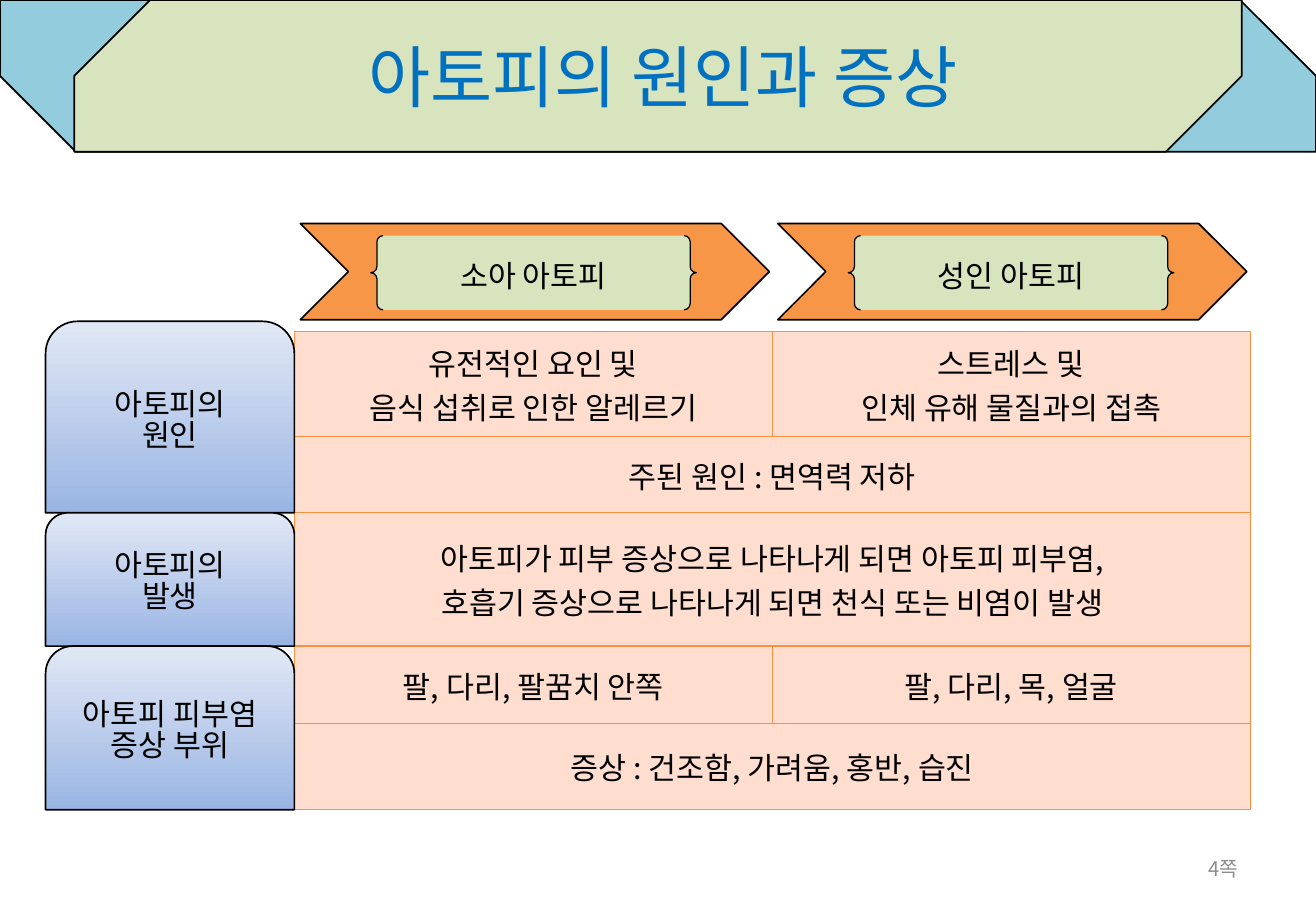
from lxml import etree
from pptx import Presentation
from pptx.dml.color import RGBColor
from pptx.enum.shapes import MSO_SHAPE as SHAPE
from pptx.enum.text import MSO_ANCHOR as ANCHOR, PP_ALIGN as ALIGN
from pptx.oxml import parse_xml
from pptx.oxml.ns import nsdecls, qn
from pptx.util import Pt

FONT = "Noto Sans CJK KR"
BLACK = RGBColor(0, 0, 0)
GRAY = RGBColor(0x8C, 0x8C, 0x8C)
TITLE_BLUE = RGBColor(0x00, 0x70, 0xC0)
BANNER_BLUE = RGBColor(0x93, 0xCD, 0xDD)
GREEN = RGBColor(0xD7, 0xE4, 0xBD)
ORANGE = RGBColor(0xF7, 0x96, 0x46)
BORDER = RGBColor(0xF6, 0x92, 0x40)
CELL_PINK = RGBColor(0xFF, 0xDD, 0xCF)
LABEL_DARK = RGBColor(0x9A, 0xB5, 0xE4)
LABEL_LIGHT = RGBColor(0xE1, 0xE8, 0xF5)

SLIDE_WIDTH, SLIDE_HEIGHT = 780, 540
ROW_HEIGHTS = [62.5, 45, 79, 46, 51]
CELL_TEXTS = [
    ["유전적인 요인 및\n음식 섭취로 인한 알레르기", "스트레스 및\n인체 유해 물질과의 접촉"],
    ["주된 원인 : 면역력 저하"],
    ["아토피가 피부 증상으로 나타나게 되면 아토피 피부염,\n"
     "호흡기 증상으로 나타나게 되면 천식 또는 비염이 발생"],
    ["팔, 다리, 팔꿈치 안쪽", "팔, 다리, 목, 얼굴"],
    ["증상 : 건조함, 가려움, 홍반, 습진"],
]
LABELS = [("아토피의\n원인", 113.5), ("아토피의\n발생", 79), ("아토피 피부염\n증상 부위", 97)]


def write_text(frame, text, size=18, color=BLACK, align=ALIGN.CENTER, spacing=1.0):
    frame.word_wrap = True
    frame.vertical_anchor = ANCHOR.MIDDLE
    for index, line in enumerate(text.split("\n")):
        paragraph = frame.paragraphs[0] if index == 0 else frame.add_paragraph()
        paragraph.alignment = align
        paragraph.line_spacing = spacing
        run = paragraph.add_run()
        run.text = line
        run.font.size = Pt(size)
        run.font.color.rgb = color
        run.font.name = FONT
        east_asian = etree.SubElement(run.font._element, qn("a:ea"))
        east_asian.set("typeface", FONT)


def add_box(slide, kind, box, fill=None, line_width=1):
    shape = slide.shapes.add_shape(kind, *map(Pt, box))
    shape.shadow.inherit = False
    shape.line.color.rgb = BLACK
    shape.line.width = Pt(line_width)
    if fill is not None:
        shape.fill.solid()
        shape.fill.fore_color.rgb = fill
    return shape


def add_banner(slide, box):
    left, top, width, height = box
    margin = 44
    # Ribbon behind, with cut corners at top right and bottom left
    ribbon = add_box(slide, SHAPE.SNIP_2_DIAG_RECTANGLE, box, BANNER_BLUE)
    ribbon.adjustments[0], ribbon.adjustments[1] = 0, 0.5
    # Panel in front, cut at the opposite corners
    panel = add_box(slide, SHAPE.SNIP_2_DIAG_RECTANGLE,
                    (left + margin, top, width - 2 * margin, height), GREEN)
    panel.adjustments[0], panel.adjustments[1] = 0.5, 0
    # Title above the panel
    title = slide.shapes.title
    title.left, title.top = Pt(left + 42), Pt(top)
    title.width, title.height = Pt(width - 78), Pt(height)
    write_text(title.text_frame, "아토피의 원인과 증상", size=40, color=TITLE_BLUE)
    slide.shapes._spTree.append(title._element)


def add_column_header(slide, box, text):
    left, top, width, height = box
    add_box(slide, SHAPE.CHEVRON, box, ORANGE)
    brace = add_box(slide, SHAPE.DOUBLE_BRACE,
                    (left + 41.75, top + 7.2, 193, 44), GREEN, line_width=0.75)
    write_text(brace.text_frame, text)


def format_cell(cell):
    properties = cell._tc.get_or_add_tcPr()
    for side in ("lnL", "lnR", "lnT", "lnB"):
        properties.append(parse_xml(
            f'<a:{side} {nsdecls("a")} w="{Pt(0.75)}"><a:solidFill>'
            f'<a:srgbClr val="{BORDER}"/></a:solidFill></a:{side}>'))
    cell.fill.solid()
    cell.fill.fore_color.rgb = CELL_PINK
    cell.vertical_anchor = ANCHOR.MIDDLE


def add_cause_table(slide, box):
    frame = slide.shapes.add_table(len(CELL_TEXTS), 2, *map(Pt, box))
    table = frame.table
    table.first_row = table.horz_banding = False
    for column in table.columns:
        column.width = Pt(box[2] / 2)
    for row, height, texts in zip(table.rows, ROW_HEIGHTS, CELL_TEXTS):
        row.height = Pt(height)
        for cell in row.cells:
            format_cell(cell)
        if len(texts) == 1:
            row.cells[0].merge(row.cells[1])
        for cell, text in zip(row.cells, texts):
            write_text(cell.text_frame, text)


def add_row_labels(slide, left, top, width):
    for text, height in LABELS:
        label = add_box(slide, SHAPE.ROUND_2_SAME_RECTANGLE, (left, top, width, height))
        label.fill.gradient()
        label.fill.gradient_angle = 90
        for stop, color in zip(label.fill.gradient_stops, (LABEL_DARK, LABEL_LIGHT)):
            stop.color.rgb = color
        write_text(label.text_frame, text, spacing=0.84)
        top += height


def add_page_number(slide, box):
    number = slide.shapes.add_textbox(*map(Pt, box))
    write_text(number.text_frame, "4쪽", size=12, color=GRAY, align=ALIGN.RIGHT)


def main():
    presentation = Presentation()
    presentation.slide_width, presentation.slide_height = Pt(SLIDE_WIDTH), Pt(SLIDE_HEIGHT)
    slide = presentation.slides.add_slide(presentation.slide_layouts[5])
    add_banner(slide, (0, 0, SLIDE_WIDTH, 90))
    for index, text in enumerate(("소아 아토피", "성인 아토피")):
        add_column_header(slide, (178 + 283 * index, 132.5, 278, 57), text)
    add_cause_table(slide, (174.5, 196.5, 566.5, sum(ROW_HEIGHTS)))
    add_page_number(slide, (559, 500.5, 182, 28.75))
    add_row_labels(slide, 27, 190.5, 147.5)
    presentation.save("out.pptx")


if __name__ == "__main__":
    main()
